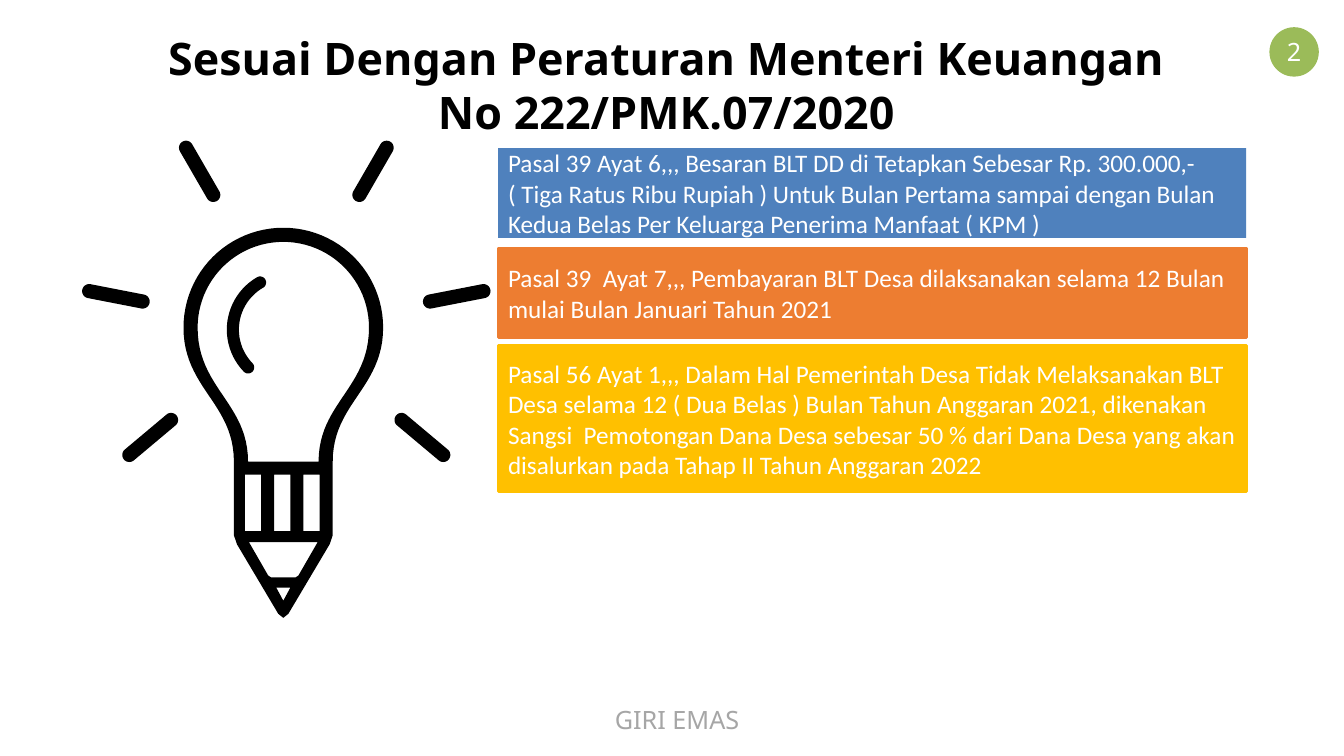
from math import cos, radians, sin

from pptx import Presentation
from pptx.dml.color import RGBColor
from pptx.enum.shapes import MSO_SHAPE as Preset
from pptx.enum.text import MSO_ANCHOR as Anchor, MSO_AUTO_SIZE as AutoSize, PP_ALIGN as Align
from pptx.util import Inches, Pt

BLACK = RGBColor(0x00, 0x00, 0x00)
WHITE = RGBColor(0xFF, 0xFF, 0xFF)
GREY = RGBColor(0xA6, 0xA6, 0xA6)
GREEN = RGBColor(0x9B, 0xBB, 0x59)
BLUE = RGBColor(0x4F, 0x81, 0xBD)
ORANGE = RGBColor(0xED, 0x7D, 0x31)
AMBER = RGBColor(0xFF, 0xC0, 0x00)

# The slide is a grid of 1333 columns by 750 rows of square cells.
CELL = Inches(0.01)
COLUMNS, ROWS = 1333, 750
CURVE_STEPS = 24

prs = Presentation()
prs.slide_width, prs.slide_height = COLUMNS * CELL, ROWS * CELL
slide = prs.slides.add_slide(prs.slide_layouts[6])


def write(holder, text, size, font, color, align=Align.LEFT, bold=False):
    paragraph = holder.text_frame.paragraphs[0]
    paragraph.alignment = align
    run = paragraph.add_run()
    run.text = text
    run.font.size, run.font.name, run.font.bold = Pt(size), font, bold
    run.font.color.rgb = color


def arc(center, radius, start, end):
    """Points along a circle; degrees run clockwise from the right."""
    angles = [radians(start + (end - start) * i / CURVE_STEPS) for i in range(CURVE_STEPS + 1)]
    return [(center[0] + radius * cos(a), center[1] + radius * sin(a)) for a in angles]


# Footer and title
captions = [
    ((50, 694, 1243, 40), "GIRI EMAS", 18, GREY, False),
    ((132, 26, 1058, 118), "Sesuai Dengan Peraturan Menteri Keuangan No 222/PMK.07/2020",
     32, BLACK, True),
]
for place, text, size, color, bold in captions:
    caption = slide.shapes.add_textbox(*[n * CELL for n in place])
    caption.text_frame.word_wrap = True
    caption.text_frame.auto_size = AutoSize.SHAPE_TO_FIT_TEXT
    write(caption, text, size, "Noto Sans", color, Align.CENTER, bold)

# Page number
badge = slide.shapes.add_shape(Preset.OVAL, *[n * CELL for n in (1259, 27, 49, 49)])
badge.shadow.inherit = False
badge.fill.solid()
badge.fill.fore_color.rgb = GREEN
badge.line.fill.background()
badge.text_frame.word_wrap = False
badge.text_frame.vertical_anchor = Anchor.MIDDLE
write(badge, "2", 18, "Noto Sans", WHITE, Align.CENTER)

# Bulb: right halves, measured from the axis, are mirrored to the left.
# The glass is a dome that narrows along a Bezier curve into the neck.
BULB_AXIS, STROKE = 281, 14
DOME_RADIUS, DOME_Y = 92, 325
NECK_HALF, NECK_Y = 42, 458
glass_edges = []
for offset in (STROKE / 2, -STROKE / 2):
    wide, narrow = DOME_RADIUS + offset, NECK_HALF + offset
    edge = arc((0, DOME_Y), wide, -90, 0)
    for step in range(1, CURVE_STEPS + 1):
        t = step / CURVE_STEPS
        weights = ((1 - t) ** 3, 3 * t * (1 - t) ** 2, 3 * t ** 2 * (1 - t), t ** 3)
        edge.append((
            sum(w * x for w, x in zip(weights, (wide, wide, narrow, narrow))),
            sum(w * y for w, y in zip(weights, (DOME_Y, 385, 400, NECK_Y)))))
    glass_edges.append(edge)
outer_edge, inner_edge = glass_edges
pencil_side = [(49, 531), (46, 540), (5, 609), (0, 613)]
wood = [(34, 538), (15, 571), (12, 573)]
lead = [(7, 583), (0, 596)]
bulb = []
for half in (outer_edge + pencil_side, inner_edge, wood, lead):
    full = half + [(-x, y) for x, y in reversed(half)]
    bulb.append([(BULB_AXIS + x, y) for x, y in full])

# Three equal slots in the pencil's ferrule
SLOT_LEFT, SLOT_TOP, SLOT_WIDTH, SLOT_HEIGHT, SLOT_GAP = 243, 471, 16, 56, 13
for column in range(3):
    left = SLOT_LEFT + column * (SLOT_WIDTH + SLOT_GAP)
    right, bottom = left + SLOT_WIDTH, SLOT_TOP + SLOT_HEIGHT
    bulb.append([(left, SLOT_TOP), (right, SLOT_TOP), (right, bottom), (left, bottom)])

# Gleam: a band between two arcs, closed by round ends
GLEAM_CENTER, GLEAM_RADIUS, GLEAM_HALF = (285, 327), 54, 6
GLEAM_START, GLEAM_END = 136, 240
first_tip, *_, last_tip = arc(GLEAM_CENTER, GLEAM_RADIUS, GLEAM_START, GLEAM_END)
gleam = (arc(GLEAM_CENTER, GLEAM_RADIUS + GLEAM_HALF, GLEAM_START, GLEAM_END)
         + arc(last_tip, GLEAM_HALF, GLEAM_END, GLEAM_END + 180)
         + arc(GLEAM_CENTER, GLEAM_RADIUS - GLEAM_HALF, GLEAM_END, GLEAM_START)
         + arc(first_tip, GLEAM_HALF, GLEAM_START + 180, GLEAM_START + 360))

# Rays: three bars with round ends on each side of the bulb
RAY_AXIS, RAY_REACH, RAY_HALF = 284, 27, 7
rays = []
for distance, y, tilt in ((86, 170, -60), (169, 294, -11), (135, 434, 40)):
    for side, heading in ((1, tilt), (-1, 180 - tilt)):
        ray = []
        for facing in (heading, heading + 180):
            dx, dy = RAY_REACH * cos(radians(facing)), RAY_REACH * sin(radians(facing))
            tip = (RAY_AXIS + side * distance + dx, y + dy)
            ray += arc(tip, RAY_HALF, facing - 90, facing + 90)
        rays.append([ray])

# Each figure is an outline followed by its holes.
idea = slide.shapes.add_group_shape()
for figure in (bulb, *rays, [gleam]):
    outline, *holes = [[(x * CELL, y * CELL) for x, y in contour] for contour in figure]
    builder = idea.shapes.build_freeform(*outline[0], scale=1.0)
    builder.add_line_segments(outline[1:], close=True)
    for hole in holes:
        builder.move_to(*hole[0])
        builder.add_line_segments(hole[1:], close=True)
    inked = builder.convert_to_shape()
    inked.shadow.inherit = False
    inked.fill.solid()
    inked.fill.fore_color.rgb = BLACK
    inked.line.fill.background()

# Articles of the regulation: top row, height, fill, border width, wording
ARTICLE_LEFT, ARTICLE_WIDTH = 494, 742
articles = [
    (147, 89, BLUE, 0,
     "Pasal 39 Ayat 6,,, Besaran BLT DD di Tetapkan Sebesar Rp. 300.000,- "
     "( Tiga Ratus Ribu Rupiah ) Untuk Bulan Pertama sampai dengan Bulan "
     "Kedua Belas Per Keluarga Penerima Manfaat ( KPM )"),
    (246, 89, ORANGE, 2,
     "Pasal 39  Ayat 7,,, Pembayaran BLT Desa dilaksanakan selama 12 Bulan "
     "mulai Bulan Januari Tahun 2021"),
    (343, 145, AMBER, 2,
     "Pasal 56 Ayat 1,,, Dalam Hal Pemerintah Desa Tidak Melaksanakan BLT "
     "Desa selama 12 ( Dua Belas ) Bulan Tahun Anggaran 2021, dikenakan "
     "Sangsi  Pemotongan Dana Desa sebesar 50 % dari Dana Desa yang akan "
     "disalurkan pada Tahap II Tahun Anggaran 2022"),
]
for top, height, color, border, wording in articles:
    place = (ARTICLE_LEFT, top, ARTICLE_WIDTH, height)
    article = slide.shapes.add_shape(Preset.RECTANGLE, *[n * CELL for n in place])
    article.shadow.inherit = False
    article.fill.solid()
    article.fill.fore_color.rgb = color
    if border:
        article.line.color.rgb = color
        article.line.width = Pt(border)
    else:
        article.line.fill.background()
    article.text_frame.word_wrap = True
    article.text_frame.vertical_anchor = Anchor.MIDDLE
    write(article, wording, 18, "Calibri", WHITE)

prs.save("out.pptx")
